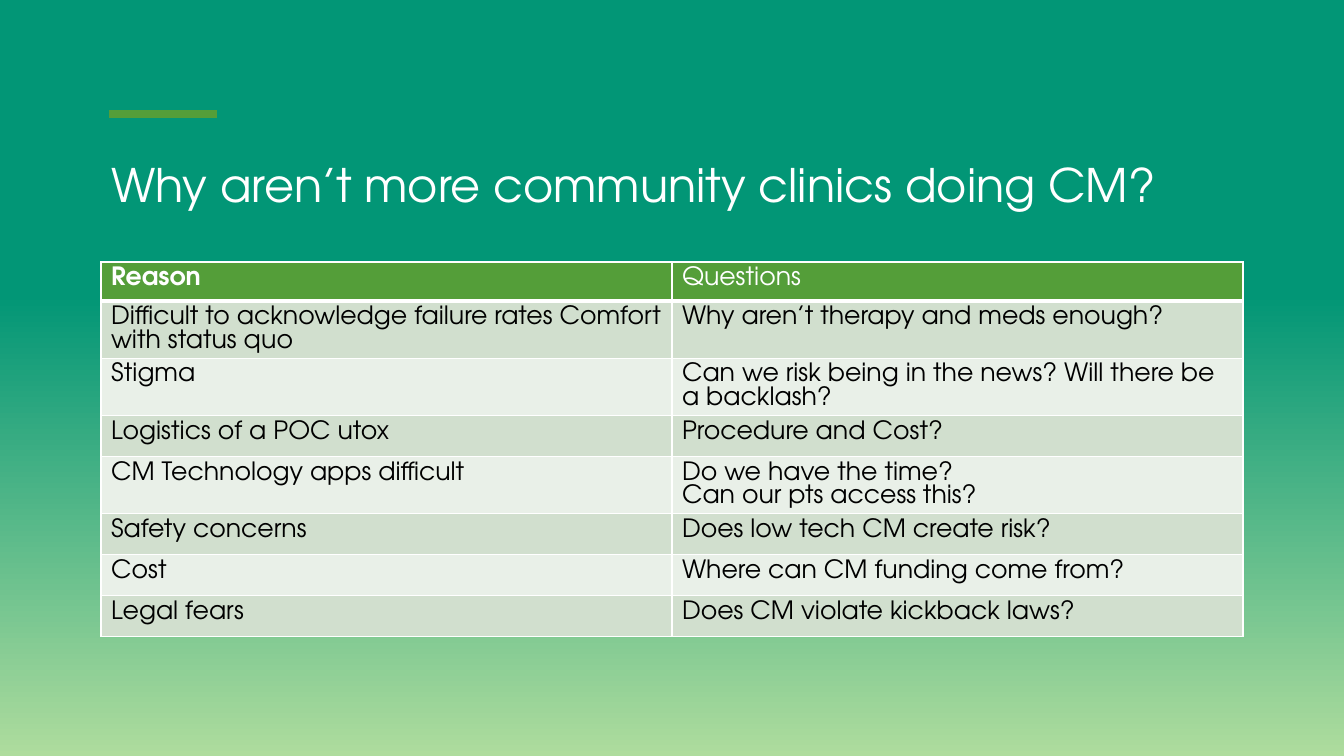
from lxml.etree import SubElement
from pptx import Presentation
from pptx.dml.color import RGBColor
from pptx.enum.shapes import MSO_CONNECTOR
from pptx.enum.text import MSO_ANCHOR, MSO_AUTO_SIZE, PP_ALIGN
from pptx.oxml.ns import qn
from pptx.util import Pt

FONT = "TeX Gyre Adventor"
TITLE = "Why aren’t more community clinics doing CM?"
ROWS = [
    ("Reason", "Questions"),
    ("Difficult to acknowledge failure rates Comfort with status quo",
     "Why aren’t therapy and meds enough?"),
    ("Stigma", "Can we risk being in the news? Will there be a backlash?"),
    ("Logistics of a POC utox", "Procedure and Cost?"),
    ("CM Technology apps difficult",
     "Do we have the time?\nCan our pts access this?"),
    ("Safety concerns", "Does low tech CM create risk?"),
    ("Cost", "Where can CM funding come from?"),
    ("Legal fears", "Does CM violate kickback laws?"),
]
BACKGROUND = [(0.39, "029676"), (1, "AEDC9D")]
GREEN, WHITE, BLACK = "549E39", "FFFFFF", "000000"
BANDS = ["E9F0E8", "D1DFCE"]
TITLE_BOX = (101, 151, 1142, 131)
ACCENT = (109, 114, 217, 114)
TABLE_BOX = (101, 262, 1142, 326)
HEADER_HEIGHT, ROW_HEIGHT = 39, 41


def px(*lengths):
    """Turn pixel lengths into EMU."""
    return [round(length * 914400 / 100.8) for length in lengths]


def color(value):
    """Turn a hex string into a colour."""
    return RGBColor.from_string(value)


def style(text_frame, size, hex_color, bold=False):
    """Format every run of a text frame."""
    for paragraph in text_frame.paragraphs:
        paragraph.alignment = PP_ALIGN.LEFT
        for run in paragraph.runs:
            run.font.name = FONT
            run.font.size = Pt(size)
            run.font.bold = bold
            run.font.color.rgb = color(hex_color)


def add_border(cell, side, width):
    """Add a white border to one side of a cell."""
    properties = cell._tc.get_or_add_tcPr()
    line = SubElement(properties, qn(f"a:ln{side}"), w=str(Pt(width)))
    fill = SubElement(line, qn("a:solidFill"))
    SubElement(fill, qn("a:srgbClr"), val=WHITE)


def add_background(slide):
    """Fill the slide with a vertical gradient."""
    fill = slide.background.fill
    fill.gradient()
    fill.gradient_angle = 270
    for stop, (position, hex_color) in zip(fill.gradient_stops, BACKGROUND):
        stop.position = position
        stop.color.rgb = color(hex_color)


def add_title(slide):
    """Place the title and the accent line above it."""
    title = slide.shapes.title
    title.left, title.top, title.width, title.height = px(*TITLE_BOX)
    title.text_frame.text = TITLE
    title.text_frame.word_wrap = True
    title.text_frame.auto_size = MSO_AUTO_SIZE.NONE
    title.text_frame.vertical_anchor = MSO_ANCHOR.TOP
    style(title.text_frame, 33, WHITE)
    accent = slide.shapes.add_connector(MSO_CONNECTOR.STRAIGHT, *px(*ACCENT))
    accent.line.color.rgb = color(GREEN)
    accent.line.width = Pt(6)
    SubElement(accent._element.spPr, qn("a:effectLst"))


def add_reasons(slide):
    """Build the table of reasons and questions."""
    frame = slide.shapes.add_table(len(ROWS), len(ROWS[0]), *px(*TABLE_BOX))
    table = frame.table
    for row_index, texts in enumerate(ROWS):
        header = row_index == 0
        height = HEADER_HEIGHT if header else ROW_HEIGHT
        table.rows[row_index].height = px(height)[0]
        widths = {"L": 1, "R": 1, "T": 3 if row_index == 1 else 1,
                  "B": 3 if header else 1}
        for column_index, text in enumerate(texts):
            cell = table.cell(row_index, column_index)
            cell.text_frame.text = text
            style(cell.text_frame, 18, WHITE if header else BLACK,
                  header and column_index == 0)
            for paragraph in cell.text_frame.paragraphs:
                paragraph.line_spacing = Pt(16.8)
            for side, width in widths.items():
                add_border(cell, side, width)
            cell.fill.solid()
            cell.fill.fore_color.rgb = color(
                GREEN if header else BANDS[row_index % 2])


def main():
    """Build and save the slide."""
    presentation = Presentation()
    presentation.slide_width, presentation.slide_height = px(1344, 756)
    slide = presentation.slides.add_slide(presentation.slide_layouts[5])
    add_background(slide)
    add_title(slide)
    add_reasons(slide)
    presentation.save("out.pptx")


if __name__ == "__main__":
    main()
